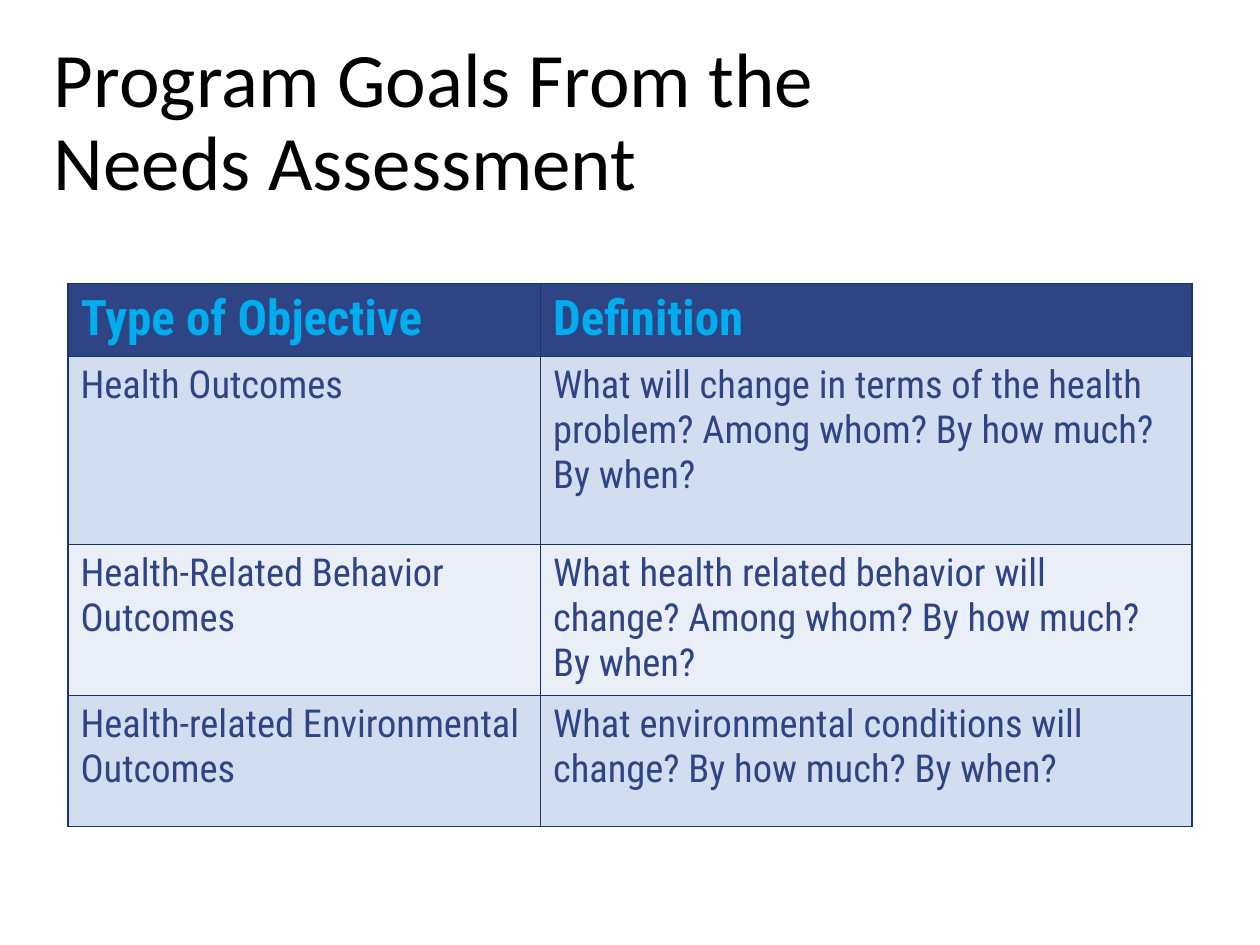
from dataclasses import dataclass

from lxml.etree import SubElement
from pptx import Presentation
from pptx.dml.color import RGBColor
from pptx.enum.text import MSO_ANCHOR as Anchor
from pptx.oxml.ns import qn
from pptx.slide import Slide
from pptx.table import _Cell as Cell
from pptx.text.text import _Paragraph as Paragraph
from pptx.util import Inches, Pt

NAVY = "2E4485"
BORDER = "17375E"
COLUMN_WIDTHS = (3.75, 5.17)


@dataclass(frozen=True)
class TextStyle:
    font: str
    size: int
    color: str
    bold: bool = False


@dataclass(frozen=True)
class ObjectiveRow:
    objective: str
    definition: str
    height: float
    fill: str
    style: TextStyle


TITLE = TextStyle("Calibri", 44, "000000")
HEADING = TextStyle("Roboto Condensed", 28, "00ADEF", True)
BODY = TextStyle("Roboto Condensed", 22, NAVY)

ROWS = (
    ObjectiveRow("Type of Objective", "Definition", 0.58, NAVY, HEADING),
    ObjectiveRow(
        "Health Outcomes",
        "What will change in terms of the health problem? Among whom? By how much? By when?",
        1.49, "D2DEEF", BODY,
    ),
    ObjectiveRow(
        "Health-Related Behavior Outcomes",
        "What health related behavior will change? Among whom? By how much? By when?",
        1.04, "EAEFF7", BODY,
    ),
    ObjectiveRow(
        "Health-related Environmental Outcomes",
        "What environmental conditions will change? By how much? By when?",
        1.04, "D2DEEF", BODY,
    ),
)


def rgb(value: str) -> RGBColor:
    return RGBColor.from_string(value)


def add_span(para: Paragraph, text: str, style: TextStyle) -> None:
    span = para.add_run()
    span.text = text
    span.font.name = style.font
    span.font.size = Pt(style.size)
    span.font.bold = style.bold
    span.font.color.rgb = rgb(style.color)


def add_title(page: Slide, lines: tuple[str, ...]) -> None:
    box = page.shapes.add_textbox(Inches(0.33), Inches(0.26), Inches(9.33), Inches(1.45))
    frame = box.text_frame
    frame.word_wrap = True
    frame.vertical_anchor = Anchor.MIDDLE
    para = frame.paragraphs[0]
    para.line_spacing = 0.9
    for index, line in enumerate(lines):
        if index:
            para.add_line_break()
        add_span(para, line, TITLE)


def add_borders(cell: Cell) -> None:
    properties = cell._tc.get_or_add_tcPr()
    for side in ("lnL", "lnR", "lnT", "lnB"):
        line = SubElement(properties, qn(f"a:{side}"), w=str(Pt(1)))
        fill = SubElement(line, qn("a:solidFill"))
        SubElement(fill, qn("a:srgbClr"), val=BORDER)


def fill_cell(cell: Cell, text: str, row: ObjectiveRow) -> None:
    add_borders(cell)
    cell.fill.solid()
    cell.fill.fore_color.rgb = rgb(row.fill)
    add_span(cell.text_frame.paragraphs[0], text, row.style)


def add_objectives(page: Slide, rows: tuple[ObjectiveRow, ...]) -> None:
    table = page.shapes.add_table(
        len(rows), len(COLUMN_WIDTHS), Inches(0.54), Inches(2.25),
        Inches(sum(COLUMN_WIDTHS)), Inches(sum(row.height for row in rows)),
    ).table
    for column, width in zip(table.columns, COLUMN_WIDTHS):
        column.width = Inches(width)
    for table_row, row in zip(table.rows, rows):
        table_row.height = Inches(row.height)
        for cell, text in zip(table_row.cells, (row.objective, row.definition)):
            fill_cell(cell, text, row)


def main() -> None:
    deck = Presentation()
    deck.slide_width = Inches(10)
    deck.slide_height = Inches(7.5)
    page = deck.slides.add_slide(deck.slide_layouts[6])
    add_title(page, ("Program Goals From the ", "Needs Assessment"))
    add_objectives(page, ROWS)
    deck.save("out.pptx")


if __name__ == "__main__":
    main()
